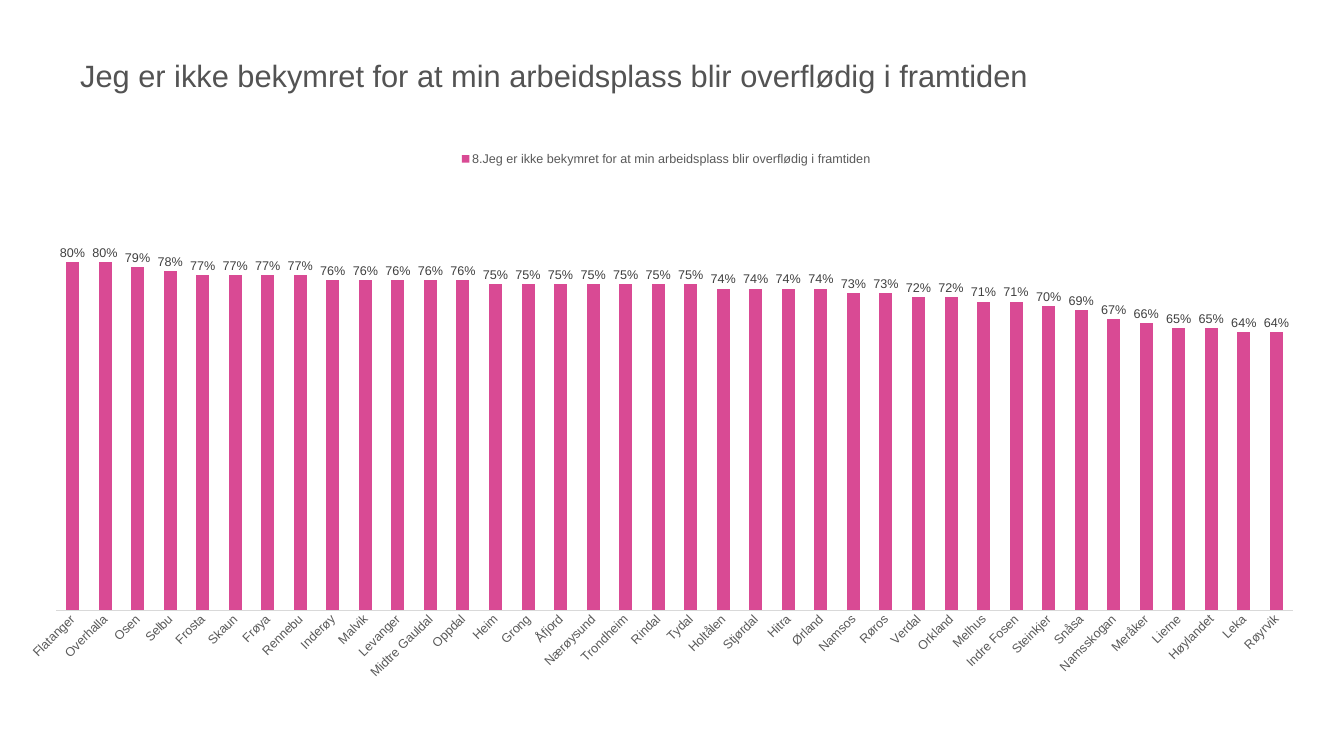
import pptx
import pptx.chart.data
import pptx.dml.color
import pptx.enum.chart
import pptx.enum.text
import pptx.oxml.ns
import pptx.util
from lxml import etree
from pptx.util import Inches

TITLE_GREY = pptx.dml.color.RGBColor(0x53, 0x53, 0x53)
TEXT_GREY = pptx.dml.color.RGBColor(0x59, 0x59, 0x59)
LABEL_GREY = pptx.dml.color.RGBColor(0x40, 0x40, 0x40)
AXIS_GREY = pptx.dml.color.RGBColor(0xD9, 0xD9, 0xD9)
WHITE = pptx.dml.color.RGBColor(0xFF, 0xFF, 0xFF)
PINK = pptx.dml.color.RGBColor(0xD9, 0x4A, 0x94)

STATEMENT = "Jeg er ikke bekymret for at min arbeidsplass blir overflødig i framtiden"
MUNICIPALITIES_BY_PERCENT = {
    80: ["Flatanger", "Overhalla"],
    79: ["Osen"],
    78: ["Selbu"],
    77: ["Frosta", "Skaun", "Frøya", "Rennebu"],
    76: ["Inderøy", "Malvik", "Levanger", "Midtre Gauldal", "Oppdal"],
    75: ["Heim", "Grong", "Åfjord", "Nærøysund", "Trondheim", "Rindal", "Tydal"],
    74: ["Holtålen", "Stjørdal", "Hitra", "Ørland"],
    73: ["Namsos", "Røros"],
    72: ["Verdal", "Orkland"],
    71: ["Melhus", "Indre Fosen"],
    70: ["Steinkjer"],
    69: ["Snåsa"],
    67: ["Namsskogan"],
    66: ["Meråker"],
    65: ["Lierne", "Høylandet"],
    64: ["Leka", "Røyrvik"],
}


def style_font(font, size, color):
    font.name = "Arial"
    font.size = pptx.util.Pt(size)
    font.bold = False
    font.color.rgb = color


def add_title(slide, left, top, width, height):
    title = slide.shapes.add_textbox(
        Inches(left), Inches(top), Inches(width), Inches(height)
    ).text_frame
    title.word_wrap = True
    title.vertical_anchor = pptx.enum.text.MSO_ANCHOR.MIDDLE
    title.margin_left = title.margin_right = Inches(0.06)
    title.margin_top = title.margin_bottom = Inches(0.06)
    title.text = STATEMENT
    style_font(title.paragraphs[0].font, 44, TITLE_GREY)


def set_plot_layout(chart, x, y, w, h):
    qn = pptx.oxml.ns.qn
    plot_area = chart.element.find(".//" + qn("c:plotArea"))
    for old_layout in plot_area.findall(qn("c:layout")):
        plot_area.remove(old_layout)
    layout = etree.Element(qn("c:layout"))
    plot_area.insert(0, layout)
    manual = etree.SubElement(layout, qn("c:manualLayout"))
    settings = {"layoutTarget": "inner", "xMode": "edge", "yMode": "edge",
                "x": x, "y": y, "w": w, "h": h}
    for tag, value in settings.items():
        etree.SubElement(manual, qn("c:" + tag)).set("val", str(value))


def style_axes(chart):
    municipality_axis = chart.category_axis
    municipality_axis.major_tick_mark = pptx.enum.chart.XL_TICK_MARK.NONE
    municipality_axis.format.line.color.rgb = AXIS_GREY
    municipality_axis.format.line.width = pptx.util.Pt(0.75)
    style_font(municipality_axis.tick_labels.font, 18, TEXT_GREY)
    label_body = chart.element.find(
        ".//c:catAx/c:txPr/a:bodyPr",
        pptx.oxml.ns.namespaces("c", "a") if hasattr(pptx.oxml.ns, "namespaces")
        else pptx.oxml.ns.nsmap if hasattr(pptx.oxml.ns, "nsmap") else None,
    )
    label_body.set("rot", "-2700000")

    share_axis = chart.value_axis
    share_axis.minimum_scale = 0
    share_axis.maximum_scale = 1
    share_axis.has_major_gridlines = False
    share_axis.tick_labels.number_format = "0%"
    share_axis.tick_labels.number_format_is_linked = False
    share_axis.visible = False


def add_share_chart(slide, left, top, width, height):
    shares = pptx.chart.data.CategoryChartData(number_format="0%")
    shares.categories = [
        name for names in MUNICIPALITIES_BY_PERCENT.values() for name in names
    ]
    shares.add_series(
        "8." + STATEMENT,
        [percent / 100 for percent, names in MUNICIPALITIES_BY_PERCENT.items() for _ in names],
    )
    chart = slide.shapes.add_chart(
        pptx.enum.chart.XL_CHART_TYPE.COLUMN_CLUSTERED,
        Inches(left), Inches(top), Inches(width), Inches(height), shares,
    ).chart
    style_font(chart.font, 18, TEXT_GREY)
    chart.has_title = False
    chart.has_legend = True
    chart.legend.position = pptx.enum.chart.XL_LEGEND_POSITION.TOP
    chart.legend.include_in_layout = False
    style_font(chart.legend.font, 18, TEXT_GREY)
    set_plot_layout(chart, 0.022, 0.055, 0.969, 0.798)
    style_axes(chart)

    columns = chart.plots[0]
    columns.gap_width = 150
    columns.overlap = -25
    columns.vary_by_categories = False
    columns.series[0].format.fill.solid()
    columns.series[0].format.fill.fore_color.rgb = PINK
    percentages = columns.series[0].data_labels
    percentages.show_value = True
    percentages.number_format = "0%"
    percentages.number_format_is_linked = False
    percentages.position = pptx.enum.chart.XL_LABEL_POSITION.OUTSIDE_END
    style_font(percentages.font, 18, LABEL_GREY)


def main():
    presentation = pptx.Presentation()
    presentation.slide_width = Inches(26.67)
    presentation.slide_height = Inches(15)
    slide = presentation.slides.add_slide(presentation.slide_layouts[6])
    slide.background.fill.solid()
    slide.background.fill.fore_color.rgb = WHITE
    add_title(slide, 1.53, 0.47, 24.58, 2.04)
    add_share_chart(slide, 0.56, 2.89, 25.32, 10.8)
    presentation.save("out.pptx")


if __name__ == "__main__":
    main()
